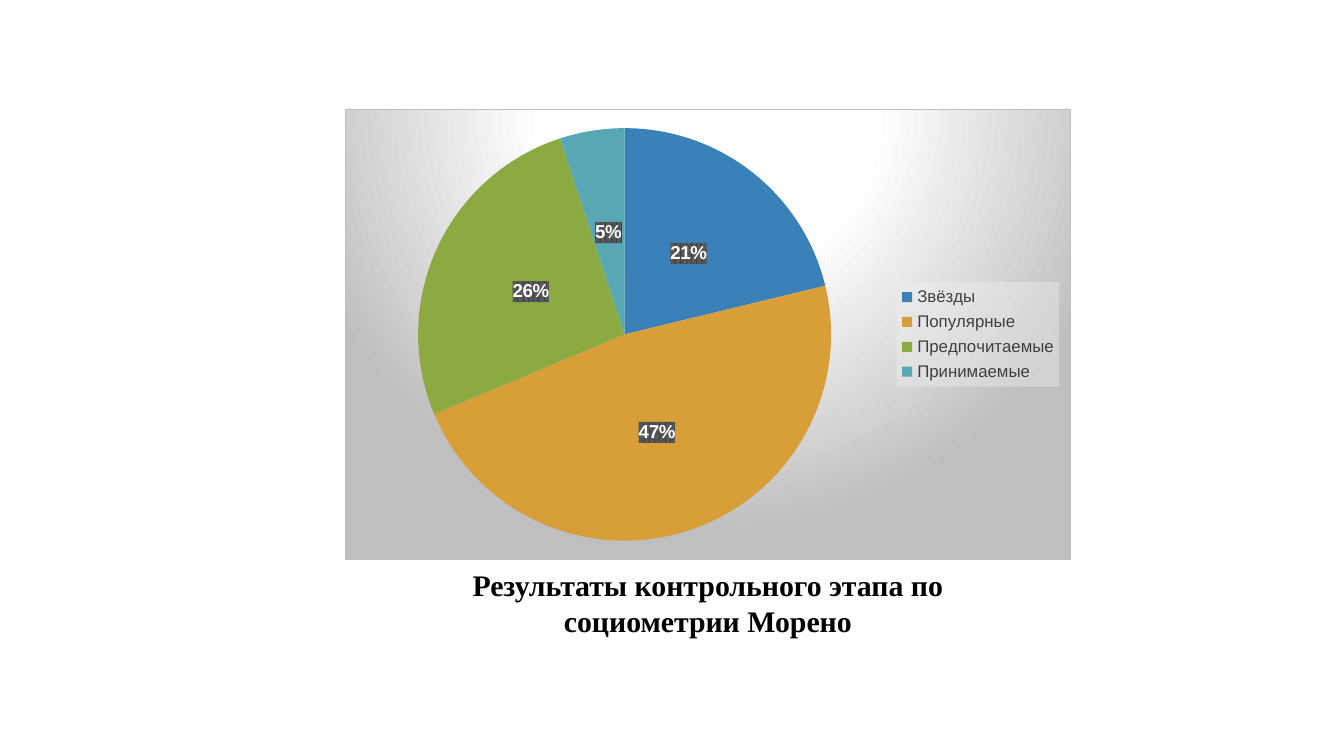
"""Build a slide with a pie chart of sociometry results and its caption."""
from pptx import Presentation
from pptx.chart.data import CategoryChartData
from pptx.dml.color import RGBColor
from pptx.enum.chart import XL_CHART_TYPE as ChartType
from pptx.enum.chart import XL_LABEL_POSITION as LabelPosition
from pptx.enum.chart import XL_LEGEND_POSITION as LegendPosition
from pptx.enum.text import PP_ALIGN as Align
from pptx.oxml import parse_xml
from pptx.oxml.ns import nsdecls, qn
from pptx.util import Emu, Pt

PX = 914400 / 134.4
COLORS = {
    "black": "000000",
    "white": "FFFFFF",
    "silver": "BFBFBF",
    "haze": "F2F2F2",
    "legend": "404040",
    "label_dark": "404040",
    "label_light": "595959",
}
GROUPS = [
    ("Звёзды", 21, "3A81BA"),
    ("Популярные", 47, "D89F39"),
    ("Предпочитаемые", 26, "8BAB42"),
    ("Принимаемые", 5, "57A7B5"),
]
CAPTION = "Результаты контрольного этапа по социометрии Морено"


def px(*lengths):
    return [Emu(round(length * PX)) for length in lengths]


def style_font(font, name, size, color, bold=False):
    font.name, font.size, font.bold = name, Pt(size), bold
    font.color.rgb = RGBColor.from_string(COLORS[color])


def color_xml(color, alpha=100):
    return f'<a:srgbClr val="{COLORS[color]}"><a:alpha val="{alpha * 1000}"/></a:srgbClr>'


def set_area(part, fill, line="<a:ln><a:noFill/></a:ln>"):
    area = parse_xml(f'<c:spPr {nsdecls("c", "a")}>{fill}{line}</c:spPr>')
    part.find(qn("c:txPr")).addprevious(area)


def radial_fill(*stops):
    marks = "".join(f'<a:gs pos="{pos * 1000}">{color_xml(color)}</a:gs>' for pos, color in stops)
    return (
        f'<a:gradFill><a:gsLst>{marks}</a:gsLst><a:path path="circle">'
        '<a:fillToRect l="50000" t="-80000" r="50000" b="180000"/></a:path></a:gradFill>'
    )


def place_plot(chart, x, y, w, h):
    area = chart._chartSpace.chart.plotArea
    for old in area.findall(qn("c:layout")):
        area.remove(old)
    sizes = "".join(f'<c:{key} val="{val}"/>' for key, val in zip("xywh", (x, y, w, h)))
    area.insert(0, parse_xml(
        f'<c:layout {nsdecls("c")}><c:manualLayout><c:layoutTarget val="inner"/>'
        f'<c:xMode val="edge"/><c:yMode val="edge"/>{sizes}</c:manualLayout></c:layout>'
    ))


def style_legend(chart):
    chart.has_legend = True
    legend = chart.legend
    legend.position, legend.include_in_layout = LegendPosition.RIGHT, False
    style_font(legend.font, "Arial", 9, "legend")
    haze = f'<a:solidFill>{color_xml("haze", 39)}</a:solidFill>'
    set_area(legend._element, haze)


def style_labels(plot):
    plot.has_data_labels = True
    labels = plot.data_labels
    labels.show_value, labels.show_percentage = False, True
    labels.number_format, labels.number_format_is_linked = "0%", False
    labels.position = LabelPosition.CENTER
    style_font(labels.font, "Arial", 10, "white", bold=True)
    pattern = (
        f'<a:pattFill prst="pct75"><a:fgClr>{color_xml("label_dark")}</a:fgClr>'
        f'<a:bgClr>{color_xml("label_light")}</a:bgClr></a:pattFill>'
    )
    set_area(labels._element, pattern)


def add_pie(slide, left, top, width, height):
    names, shares, hues = zip(*GROUPS)
    results = CategoryChartData()
    results.categories = names
    results.add_series("Series 1", shares)
    chart = slide.shapes.add_chart(ChartType.PIE, *px(left, top, width, height), results).chart
    chart.has_title = False
    style_font(chart.font, "Arial", 10, "black")
    border = f'<a:ln w="{Pt(0.75)}"><a:solidFill>{color_xml("silver")}</a:solidFill></a:ln>'
    set_area(chart._chartSpace, radial_fill((0, "white"), (39, "white"), (100, "silver")), border)
    place_plot(chart, 0.1, 0.04, 0.57, 0.92)
    style_legend(chart)
    pie = chart.plots[0]
    pie.vary_by_categories = True
    style_labels(pie)
    for index, hue in enumerate(hues):
        slice_fill = pie.series[0].points[index].format.fill
        slice_fill.solid()
        slice_fill.fore_color.rgb = RGBColor.from_string(hue)


def add_caption(slide, left, top, width, height):
    frame = slide.shapes.add_textbox(*px(left, top, width, height)).text_frame
    frame.word_wrap = True
    frame.text = CAPTION
    line = frame.paragraphs[0]
    line.alignment = Align.CENTER
    style_font(line.runs[0].font, "Times New Roman", 16, "black", bold=True)


def main():
    deck = Presentation()
    deck.slide_width, deck.slide_height = px(1344, 756)
    slide = deck.slides.add_slide(deck.slide_layouts[6])
    add_pie(slide, 345, 109, 726, 451)
    add_caption(slide, 372, 560, 672, 86)
    deck.save("out.pptx")


if __name__ == "__main__":
    main()
